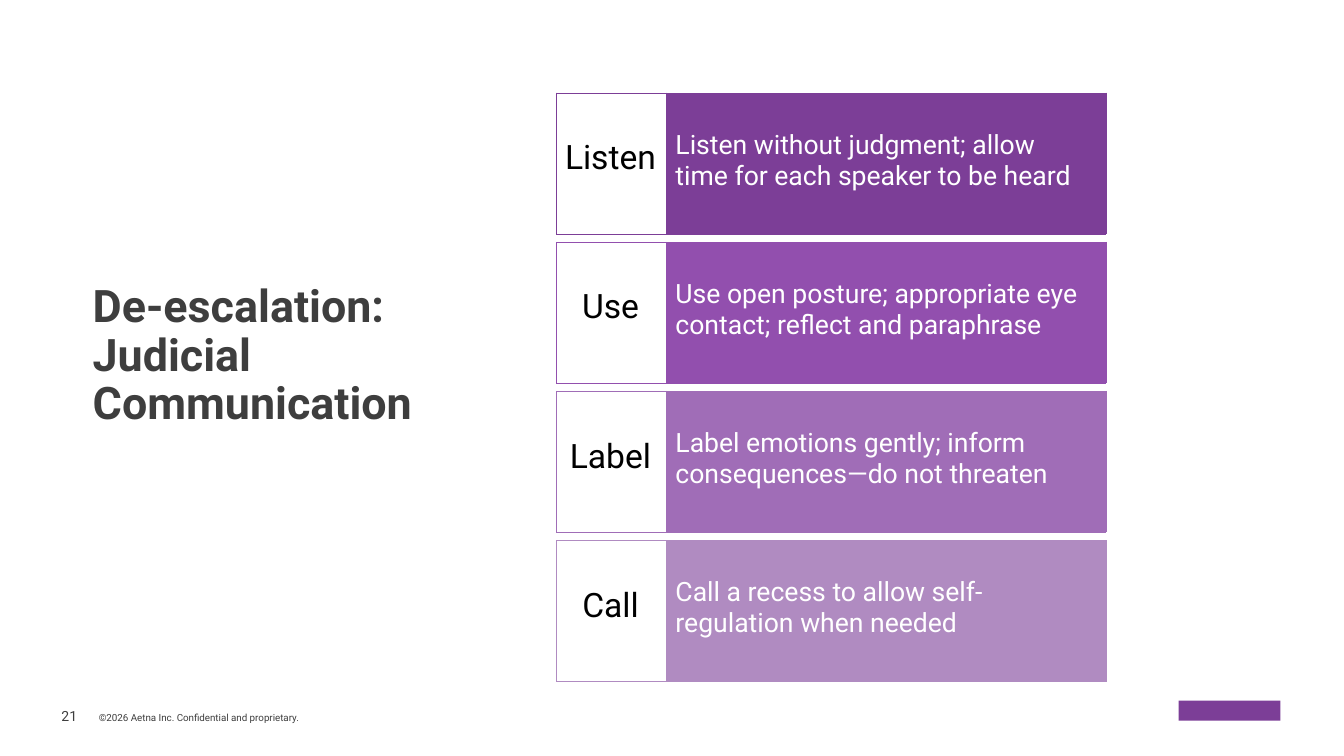
from dataclasses import dataclass

from lxml import etree
from pptx import Presentation
from pptx.dml.color import RGBColor
from pptx.enum.shapes import MSO_SHAPE as SHAPE
from pptx.enum.text import MSO_ANCHOR as ANCHOR, MSO_AUTO_SIZE as AUTO, PP_ALIGN as ALIGN
from pptx.oxml.ns import qn
from pptx.util import Inches, Pt


@dataclass(frozen=True)
class Theme:
    font: str = "Roboto"
    dark: str = "3E3E3E"
    black: str = "000000"
    white: str = "FFFFFF"
    purples: tuple = ("7C3E97", "924FAE", "A06DB7", "B08BC1")
    title: float = 32
    label: float = 24
    body: float = 19
    number: float = 10
    notice: float = 7
    border: float = 0.25


STEPS = [
    ("Listen", "Listen without judgment; allow time for each speaker to be heard"),
    ("Use", "Use open posture; appropriate eye contact; reflect and paraphrase"),
    ("Label", "Label emotions gently; inform consequences—do not threaten"),
    ("Call", "Call a recess to allow self-regulation when needed"),
]


def set_margins(obj, left=0, top=0, right=0, bottom=0):
    obj.margin_left, obj.margin_top = Inches(left), Inches(top)
    obj.margin_right, obj.margin_bottom = Inches(right), Inches(bottom)


class SlideBuilder:
    def __init__(self, prs, theme):
        self.theme = theme
        self.slide = prs.slides.add_slide(prs.slide_layouts[5])

    def add_text(self, p, text, *, size, color, bold=False, align=ALIGN.LEFT, spacing=None):
        p.alignment = align
        if spacing:
            p.line_spacing = Pt(spacing)
        r = p.add_run()
        r.text = text
        r.font.name, r.font.size, r.font.bold = self.theme.font, Pt(size), bold
        r.font.color.rgb = RGBColor.from_string(color)

    def frame(self, sp, **margins):
        tf = sp.text_frame
        tf.word_wrap, tf.auto_size = True, AUTO.NONE
        tf.vertical_anchor = ANCHOR.TOP
        set_margins(tf, **margins)
        return tf.paragraphs[0]

    def title(self, text, x, y, w, h):
        sp = self.slide.shapes.title
        sp.left, sp.top, sp.width, sp.height = map(Inches, (x, y, w, h))
        self.add_text(self.frame(sp, left=0.01, top=0.08), text, size=self.theme.title,
                      color=self.theme.dark, bold=True, spacing=34.6)

    def footer(self, number, notice, x, y, w, h, tab):
        sp = self.slide.shapes.add_textbox(*map(Inches, (x, y, w, h)))
        p = self.frame(sp)
        tabs = etree.SubElement(p._p.get_or_add_pPr(), qn("a:tabLst"))
        etree.SubElement(tabs, qn("a:tab"), pos=str(Inches(tab)), algn="l")
        self.add_text(p, number + "\t", size=self.theme.number, color=self.theme.dark)
        self.add_text(p, notice, size=self.theme.notice, color=self.theme.dark)

    def block(self, x, y, w, h, color):
        sp = self.slide.shapes.add_shape(SHAPE.RECTANGLE, *map(Inches, (x, y, w, h)))
        sp.shadow.inherit = False
        sp.fill.solid()
        sp.fill.fore_color.rgb = RGBColor.from_string(color)
        sp.line.fill.background()

    def border(self, cell, color):
        tc_pr = cell._tc.get_or_add_tcPr()
        for i, side in enumerate(("lnL", "lnR", "lnT", "lnB")):
            ln = etree.Element(qn("a:" + side), w=str(Pt(self.theme.border)))
            fill = etree.SubElement(ln, qn("a:solidFill"))
            etree.SubElement(fill, qn("a:srgbClr"), val=color)
            tc_pr.insert(i, ln)

    def step(self, label, text, x, y, widths, h, color):
        t = self.theme
        table = self.slide.shapes.add_table(
            1, 2, Inches(x), Inches(y), Inches(sum(widths)), Inches(h)).table
        table.first_row = table.horz_banding = False
        for column, width in zip(table.columns, widths):
            column.width = Inches(width)
        name, detail = table.cell(0, 0), table.cell(0, 1)
        name.fill.background()
        detail.fill.solid()
        detail.fill.fore_color.rgb = RGBColor.from_string(color)
        set_margins(name, right=0.02, bottom=0.1)
        set_margins(detail, left=0.09, right=0.25, bottom=0.05)
        for cell in (name, detail):
            cell.vertical_anchor = ANCHOR.MIDDLE
            self.border(cell, color)
        self.add_text(name.text_frame.paragraphs[0], label, size=t.label,
                      color=t.black, align=ALIGN.CENTER)
        self.add_text(detail.text_frame.paragraphs[0], text, size=t.body,
                      color=t.white, spacing=22.1)


def main():
    prs = Presentation()
    prs.slide_width, prs.slide_height = Inches(13.33), Inches(7.5)
    theme = Theme()
    page = SlideBuilder(prs, theme)

    # Brand block and title
    page.block(11.69, 6.95, 1.01, 0.2, theme.purples[0])
    page.title("De-escalation: Judicial Communication", 0.91, 2.73, 3.48, 1.52)

    # Footer
    page.footer("21", "©2026 Aetna Inc. Confidential and proprietary.",
                0.61, 7.02, 2.75, 0.17, tab=0.37)

    # Four steps, evenly stacked
    for i, ((label, text), color) in enumerate(zip(STEPS, theme.purples)):
        page.step(label, text, 5.52, 0.92 + 1.48 * i, (1.09, 4.36), 1.4, color)

    prs.save("out.pptx")


if __name__ == "__main__":
    main()
